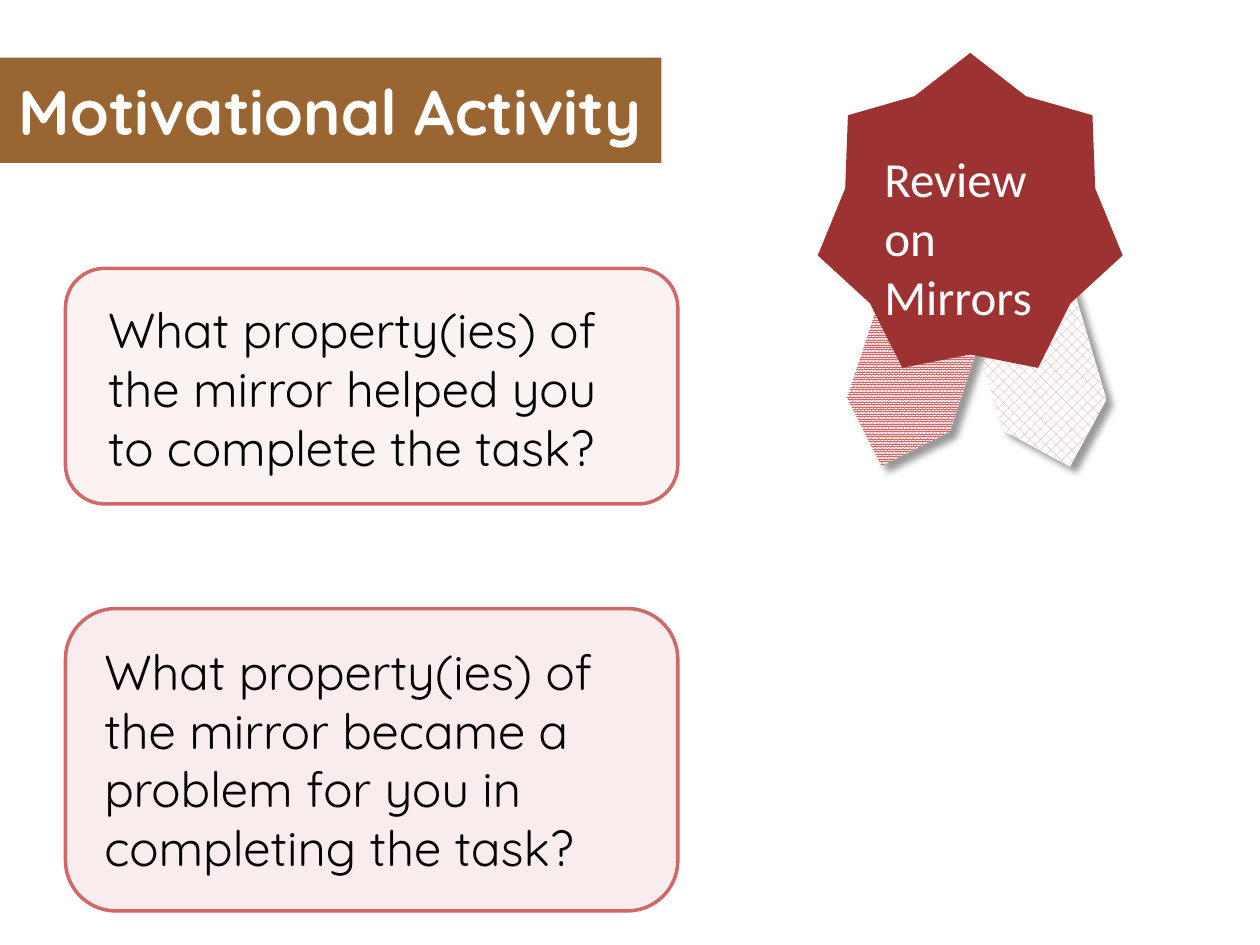
from dataclasses import dataclass

import pptx
import pptx.dml.color
import pptx.enum.dml
import pptx.enum.shapes
import pptx.enum.text
import pptx.oxml
import pptx.oxml.ns
import pptx.util

Inches = pptx.util.Inches
Pt = pptx.util.Pt
RGB = pptx.dml.color.RGBColor.from_string
SHAPE = pptx.enum.shapes.MSO_SHAPE
PATTERN = pptx.enum.dml.MSO_PATTERN
ALIGN = pptx.enum.text.PP_ALIGN
ANCHOR = pptx.enum.text.MSO_ANCHOR


@dataclass(frozen=True)
class Theme:
    banner: str = "996633"
    badge: str = "9D3232"
    card: str = "F6E2E2"
    accent: str = "CF6868"
    accent_light: str = "DE9898"
    white: str = "FFFFFF"
    black: str = "000000"
    font: str = "Quicksand"
    badge_font: str = "Calibri"
    title_size: int = 36
    body_size: int = 28


THEME = Theme()


def place(sp, box):
    sp.left, sp.top, sp.width, sp.height = (Inches(v) for v in box)


def write(sp, text, *, size=THEME.body_size, font=THEME.font, color=THEME.black,
          bold=False, align=ALIGN.LEFT, anchor=ANCHOR.TOP):
    tf = sp.text_frame
    tf.word_wrap = True
    tf.auto_size = pptx.enum.text.MSO_AUTO_SIZE.SHAPE_TO_FIT_TEXT
    tf.vertical_anchor = anchor
    p = tf.paragraphs[0]
    p.alignment = align
    r = p.add_run()
    r.text = text
    r.font.size = Pt(size)
    r.font.name = font
    r.font.bold = bold
    r.font.color.rgb = RGB(color)


def add_text(slide, box, text, **style):
    sp = slide.shapes.add_textbox(*(Inches(v) for v in box))
    write(sp, text, **style)


def add_shape(slide, kind, box):
    sp = slide.shapes.add_shape(kind, *(Inches(v) for v in box))
    sp.shadow.inherit = False
    sp.line.fill.background()
    return sp


def fill_solid(sp, color, opacity=100):
    sp.fill.solid()
    sp.fill.fore_color.rgb = RGB(color)
    if opacity < 100:
        clr = sp._element.spPr.find(".//" + pptx.oxml.ns.qn("a:srgbClr"))
        clr.append(pptx.oxml.parse_xml(
            f'<a:alpha {pptx.oxml.ns.nsdecls("a")} val="{opacity * 1000}"/>'))


def cast_shadow(sp):
    effects = sp._element.spPr.find(pptx.oxml.ns.qn("a:effectLst"))
    effects.append(pptx.oxml.parse_xml(
        f'<a:outerShdw {pptx.oxml.ns.nsdecls("a")} blurRad="{Pt(4)}" dist="{Pt(5)}" '
        f'dir="{45 * 60000}" algn="tl" rotWithShape="0"><a:srgbClr val="{THEME.black}">'
        '<a:alpha val="40000"/></a:srgbClr></a:outerShdw>'))


def add_banner(slide, box, text):
    title = slide.shapes.title
    place(title, box)
    fill_solid(title, THEME.banner)
    write(title, text, size=THEME.title_size, color=THEME.white, bold=True,
          align=ALIGN.CENTER, anchor=ANCHOR.MIDDLE)


def add_question(slide, box, text, text_box, opacity):
    """Draw a rounded card; text_box is relative to the card's corner."""
    card = add_shape(slide, SHAPE.ROUNDED_RECTANGLE, box)
    fill_solid(card, THEME.card, opacity)
    card.line.color.rgb = RGB(THEME.accent)
    card.line.width = Pt(2)
    dx, dy, width, height = text_box
    add_text(slide, (box[0] + dx, box[1] + dy, width, height), text)


def add_ribbon(slide, box, angle, pattern, color):
    ribbon = add_shape(slide, SHAPE.PENTAGON, box)
    ribbon.rotation = angle
    ribbon.fill.patterned()
    ribbon.fill.pattern = PATTERN.from_xml(pattern)
    ribbon.fill.fore_color.rgb = RGB(color)
    ribbon.fill.back_color.rgb = RGB(THEME.white)
    cast_shadow(ribbon)


def add_badge(slide, box, text):
    """Draw a star with two ribbons hanging behind it."""
    left, top, width, height = box
    add_ribbon(slide, (left + 0.75, top + 1.92, 1.95, 0.86), 73.5,
               "pct40", THEME.accent_light)
    add_ribbon(slide, (left - 0.05, top + 2.08, 1.62, 0.86), 108.3,
               "pct90", THEME.accent)
    star = add_shape(slide, SHAPE.STAR_7_POINT, box)
    star.adjustments[0] = 0.41
    fill_solid(star, THEME.badge)
    add_text(slide, (left + 0.43, top + 0.71, 1.68, 1.71), text,
             font=THEME.badge_font, color=THEME.white)


def main():
    prs = pptx.Presentation()
    prs.slide_width, prs.slide_height = Inches(10), Inches(7.5)
    slide = prs.slides.add_slide(prs.slide_layouts[5])
    add_banner(slide, (-0.01, 0.52, 5.26, 0.71), "Motivational Activity")
    add_question(slide, (0.52, 2.13, 4.86, 1.87),
                 "What property(ies) of the mirror helped you to complete the task?",
                 (0.24, 0.2, 4.41, 1.51), opacity=42)
    add_question(slide, (0.52, 4.83, 4.86, 2.4),
                 "What property(ies) of the mirror became a problem for you in "
                 "completing the task?",
                 (0.21, 0.21, 4.44, 1.99), opacity=65)
    add_badge(slide, (6.49, 0.42, 2.42, 2.5), "Review on Mirrors")
    prs.save("out.pptx")


if __name__ == "__main__":
    main()
